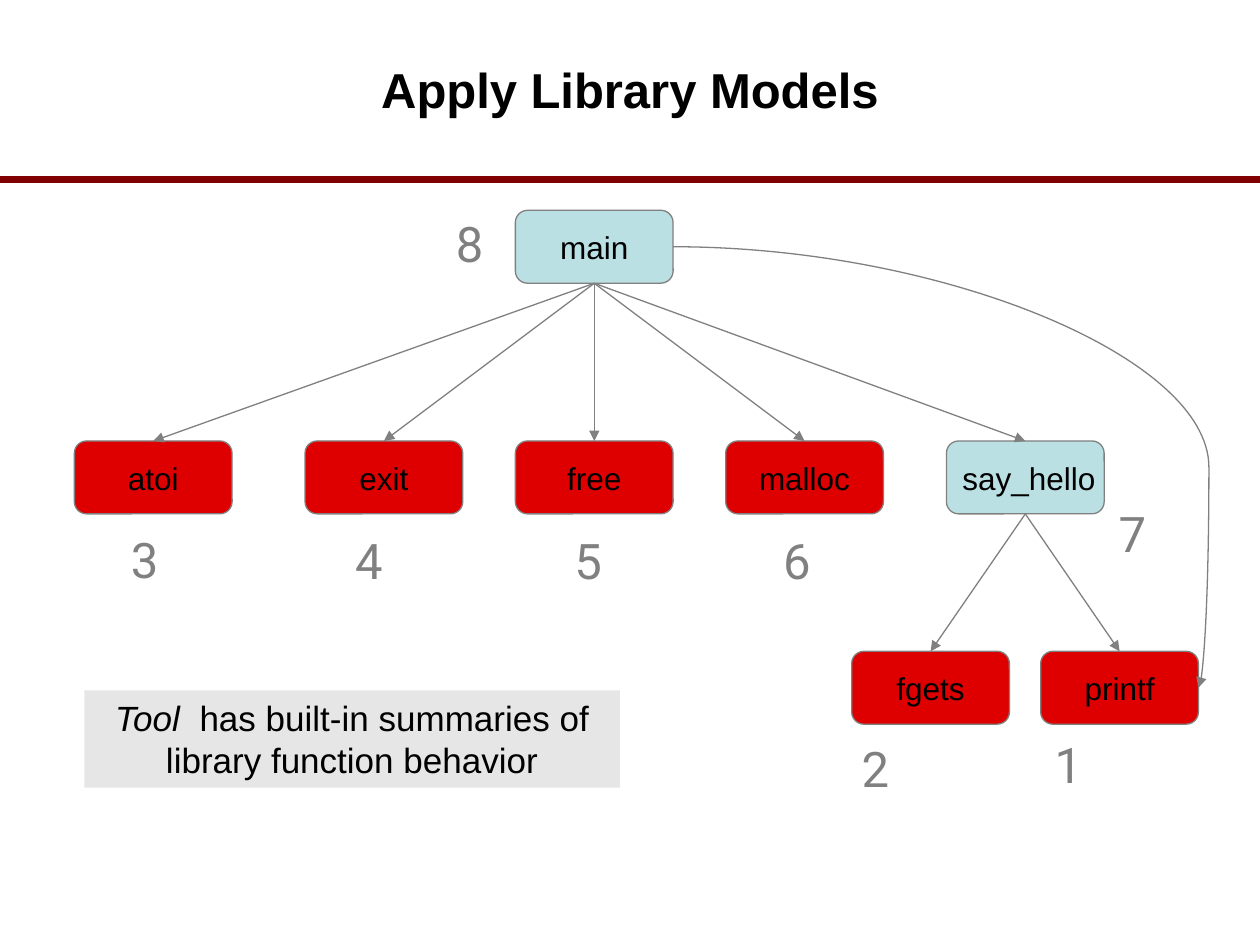
import pptx
import pptx.util
import pptx.dml.color
import pptx.enum.shapes
import pptx.enum.text
from lxml import etree
from pptx.util import Cm

RGBColor = pptx.dml.color.RGBColor
Shape = pptx.enum.shapes.MSO_SHAPE
Link = pptx.enum.shapes.MSO_CONNECTOR
Align = pptx.enum.text.PP_ALIGN
Anchor = pptx.enum.text.MSO_ANCHOR
AutoSize = pptx.enum.text.MSO_AUTO_SIZE

BLACK = RGBColor(0x00, 0x00, 0x00)
GRAY = RGBColor(0x80, 0x80, 0x80)
PALE_GRAY = RGBColor(0xE6, 0xE6, 0xE6)
MAROON = RGBColor(0x80, 0x00, 0x00)
LIBRARY_RED = RGBColor(0xDE, 0x00, 0x00)
PROGRAM_BLUE = RGBColor(0xBB, 0xE0, 0xE3)

DRAWING = "http://schemas.openxmlformats.org/drawingml/2006/main"
TOP, BOTTOM, RIGHT = 0, 2, 3  # connection sites of a rounded rectangle
NODE_WIDTH, NODE_HEIGHT = 3.18, 1.47
MAIN_ROW, CALL_ROW, LEAF_ROW = 4.24, 8.89, 13.13

# name: left, top, fill
NODES = {
    "atoi": (1.5, CALL_ROW, LIBRARY_RED),
    "main": (10.39, MAIN_ROW, PROGRAM_BLUE),
    "exit": (6.15, CALL_ROW, LIBRARY_RED),
    "free": (10.39, CALL_ROW, LIBRARY_RED),
    "malloc": (14.63, CALL_ROW, LIBRARY_RED),
    "printf": (20.98, LEAF_ROW, LIBRARY_RED),
    "fgets": (17.17, LEAF_ROW, LIBRARY_RED),
    "say_hello": (19.08, CALL_ROW, PROGRAM_BLUE),
}
CALLS = {
    "main": ["atoi", "exit", "free", "malloc", "say_hello"],
    "say_hello": ["fgets", "printf"],
}
# left and top of the numbers 1 to 8
ORDER = [(21.01, 14.68), (17.12, 14.76), (2.39, 10.54), (6.91, 10.57),
         (11.33, 10.57), (15.54, 10.57), (22.3, 10.03), (8.94, 4.17)]


class Diagram:
    font = "Arial"
    number_font = "Roboto"

    def __init__(self, slide):
        self.slide = slide

    def style_span(self, span, size, color=BLACK, font=None, bold=False):
        span.font.name = font or self.font
        span.font.size = pptx.util.Pt(size)
        span.font.bold = bold
        span.font.color.rgb = color

    def set_text(self, shape, text, size, align=Align.CENTER, wrap=True,
                 **style):
        frame = shape.text_frame
        frame.text = text
        frame.word_wrap = wrap
        para = frame.paragraphs[0]
        para.alignment = align
        self.style_span(para.runs[0], size, **style)
        return frame

    def text(self, left, top, width, height, text, size, **style):
        box = self.slide.shapes.add_textbox(
            Cm(left), Cm(top), Cm(width), Cm(height))
        return self.set_text(box, text, size, **style)

    def number(self, left, top, value):
        frame = self.text(left, top, 1.02, 1.45, str(value), 28,
                          align=Align.LEFT, color=GRAY,
                          font=self.number_font, wrap=False)
        frame.auto_size = AutoSize.SHAPE_TO_FIT_TEXT

    def filled_shape(self, kind, left, top, width, height, fill):
        box = self.slide.shapes.add_shape(
            kind, Cm(left), Cm(top), Cm(width), Cm(height))
        box.shadow.inherit = False
        box.fill.solid()
        box.fill.fore_color.rgb = fill
        return box

    def node(self, name, left, top, fill, align):
        box = self.filled_shape(Shape.ROUNDED_RECTANGLE, left, top,
                                NODE_WIDTH, NODE_HEIGHT, fill)
        box.line.color.rgb = GRAY
        box.line.width = pptx.util.Pt(0.75)
        frame = self.set_text(box, name, 18, align=align, wrap=False)
        frame.vertical_anchor = Anchor.MIDDLE
        return box

    def line(self, kind, start, end, color=GRAY, width=0.75):
        line = self.slide.shapes.add_connector(
            kind, *(Cm(length) for length in start + end))
        line.line.color.rgb = color
        line.line.width = pptx.util.Pt(width)
        etree.SubElement(line.element.spPr, f"{{{DRAWING}}}effectLst")
        return line

    def arrow(self, caller, callee, kind=Link.STRAIGHT, sites=(BOTTOM, TOP)):
        """Glue an arrow to the given connection sites of two nodes."""
        arrow = self.line(kind, (0, 0), (0, 0))
        arrow.begin_connect(caller, sites[0])
        arrow.end_connect(callee, sites[1])
        outline = arrow.element.spPr.find(f"{{{DRAWING}}}ln")
        etree.SubElement(outline, f"{{{DRAWING}}}tailEnd", type="triangle")
        return arrow

    def bulging_arrow(self, caller, callee, bulge):
        """Curve from right side to right side, turning at a share of the width."""
        arrow = self.arrow(caller, callee, Link.CURVE, (RIGHT, RIGHT))
        guides = arrow.element.spPr.find(f".//{{{DRAWING}}}avLst")
        etree.SubElement(guides, f"{{{DRAWING}}}gd", name="adj1",
                         fmla=f"val {round(bulge * 100000)}")

    def note(self, left, top, width, height, lead, rest):
        box = self.filled_shape(Shape.RECTANGLE, left, top, width, height,
                                PALE_GRAY)
        box.line.fill.background()
        frame = self.set_text(box, lead, 20)
        frame.vertical_anchor = Anchor.TOP
        para = frame.paragraphs[0]
        para.runs[0].font.italic = True
        span = para.add_run()
        span.text = rest
        self.style_span(span, 20)


def main():
    deck = pptx.Presentation()
    deck.slide_width, deck.slide_height = Cm(25.4), Cm(19.05)
    diagram = Diagram(deck.slides.add_slide(deck.slide_layouts[6]))

    diagram.line(Link.STRAIGHT, (0, 3.61), (25.4, 3.61), MAROON, 4)
    title = diagram.text(1.9, 0.2, 21.6, 3.18, "Apply Library Models", 28,
                         bold=True)
    title.vertical_anchor = Anchor.MIDDLE

    nodes = {}
    for name, (left, top, fill) in NODES.items():
        align = Align.LEFT if name == "say_hello" else Align.CENTER
        nodes[name] = diagram.node(name, left, top, fill, align)
    for caller, callees in CALLS.items():
        for callee in callees:
            diagram.arrow(nodes[caller], nodes[callee])
    diagram.bulging_arrow(nodes["main"], nodes["printf"], 1.02)

    for value, (left, top) in enumerate(ORDER, start=1):
        diagram.number(left, top, value)
    diagram.note(1.7, 13.92, 10.8, 1.96, "Tool  ",
                 "has built-in summaries of library function behavior")

    deck.save("out.pptx")


if __name__ == "__main__":
    main()
